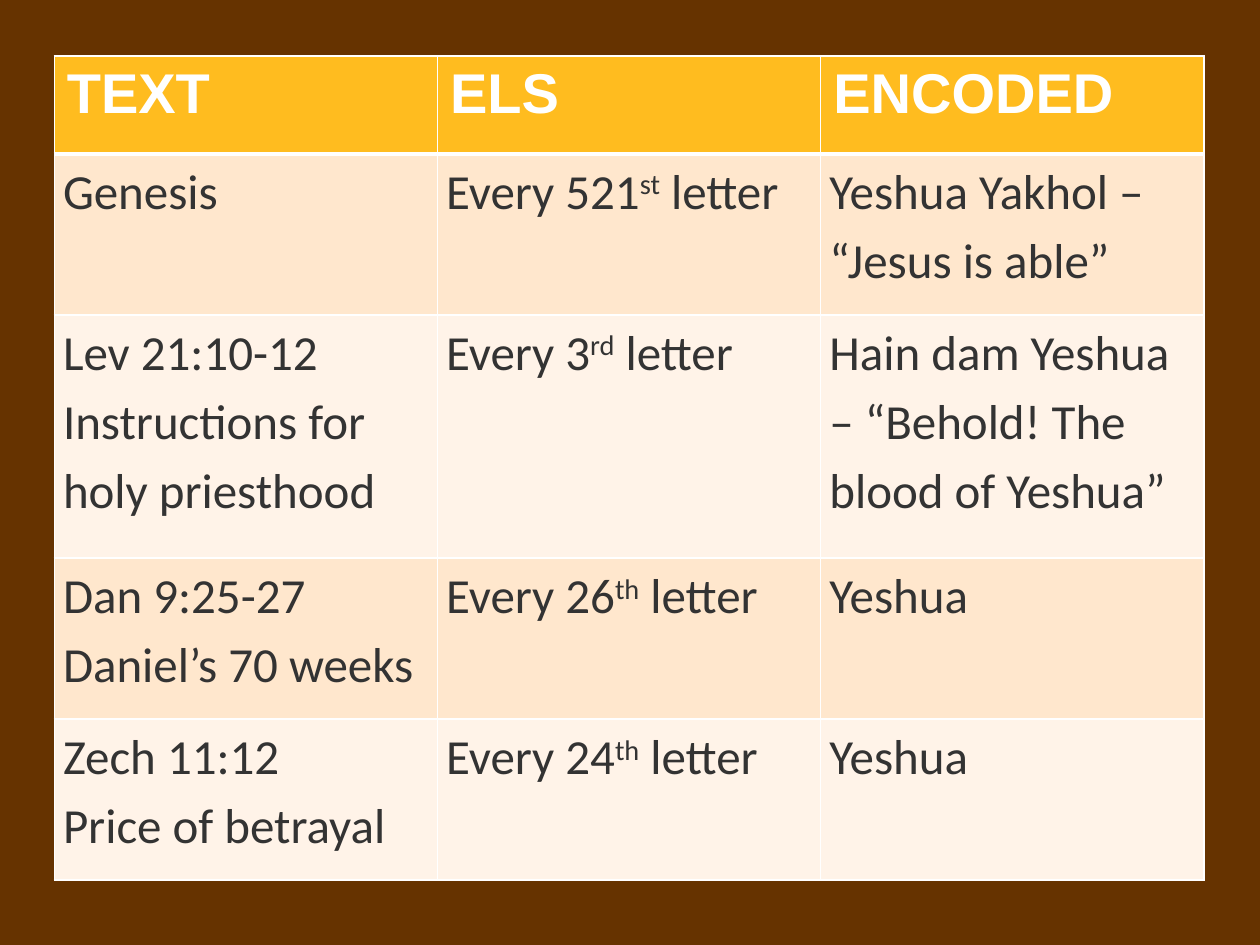
import dataclasses

import pptx
import pptx.dml.color
import pptx.oxml
import pptx.oxml.ns
import pptx.util

Pt = pptx.util.Pt
RGBColor = pptx.dml.color.RGBColor

BROWN = RGBColor(0x66, 0x33, 0x00)
AMBER = RGBColor(0xFF, 0xBC, 0x1F)
PEACH = RGBColor(0xFF, 0xE7, 0xCD)
CREAM = RGBColor(0xFF, 0xF3, 0xE8)
WHITE = RGBColor(0xFF, 0xFF, 0xFF)
CHARCOAL = RGBColor(0x33, 0x33, 0x33)


@dataclasses.dataclass(frozen=True)
class Row:
    height: float
    cells: tuple[str, str, str]


# Text between carets is superscript; a newline starts a paragraph
HEADER = Row(56, ("TEXT", "ELS", "ENCODED"))
BODY = (
    Row(92, ("Genesis", "Every 521^st^ letter", "Yeshua Yakhol – “Jesus is able”")),
    Row(139, ("Lev 21:10-12 Instructions for holy priesthood", "Every 3^rd^ letter",
              "Hain dam Yeshua – “Behold! The blood of Yeshua”")),
    Row(92, ("Dan 9:25-27 Daniel’s 70 weeks", "Every 26^th^ letter", "Yeshua")),
    Row(92, ("Zech 11:12\nPrice of betrayal", "Every 24^th^ letter", "Yeshua")),
)
LEFT, TOP, COL_WIDTH = 31, 32, 219


def write_text(tf, text: str, *, font: str, size: float, color: RGBColor,
               bold: bool = False, line_spacing: float = 1.0) -> None:
    for i, line in enumerate(text.split("\n")):
        p = tf.add_paragraph() if i else tf.paragraphs[0]
        p.line_spacing = line_spacing
        for j, part in enumerate(line.split("^")):
            r = p.add_run()
            r.text = part
            r.font.name, r.font.size, r.font.bold = font, Pt(size), bold
            r.font.color.rgb = color
            if j % 2:
                r.font._element.set("baseline", "30000")


def set_borders(cell, **widths: float) -> None:
    tc_pr = cell._tc.get_or_add_tcPr()
    for side in ("L", "R", "T", "B"):
        width = Pt(widths.get(side, 1))
        tc_pr.append(pptx.oxml.parse_xml(
            f'<a:ln{side} {pptx.oxml.ns.nsdecls("a")} w="{width}"><a:solidFill>'
            f'<a:srgbClr val="{WHITE}"/></a:solidFill></a:ln{side}>'))


def fill_cell(cell, color: RGBColor) -> None:
    cell.fill.solid()
    cell.fill.fore_color.rgb = color


def draw_table(slide, header: Row, body: tuple[Row, ...]) -> None:
    rows = (header, *body)
    n_cols = len(header.cells)
    table = slide.shapes.add_table(
        len(rows), n_cols, Pt(LEFT), Pt(TOP), Pt(COL_WIDTH * n_cols),
        Pt(sum(row.height for row in rows))).table
    table.horz_banding = False
    for column in table.columns:
        column.width = Pt(COL_WIDTH)

    for i, row in enumerate(rows):
        table.rows[i].height = Pt(row.height)
        for j, text in enumerate(row.cells):
            cell = table.cell(i, j)
            if i == 0:
                set_borders(cell, B=3)
                fill_cell(cell, AMBER)
                write_text(cell.text_frame, text, font="Arial", size=32,
                           color=WHITE, bold=True)
            else:
                set_borders(cell, T=3 if i == 1 else 1)
                fill_cell(cell, PEACH if i % 2 else CREAM)
                cell.margin_left = cell.margin_right = Pt(5)
                cell.margin_top = cell.margin_bottom = Pt(0)
                write_text(cell.text_frame, text, font="Calibri", size=28,
                           color=CHARCOAL, line_spacing=1.15)


def main() -> None:
    prs = pptx.Presentation()
    prs.slide_width, prs.slide_height = Pt(720), Pt(540)
    slide = prs.slides.add_slide(prs.slide_layouts[6])

    # Background
    slide.background.fill.solid()
    slide.background.fill.fore_color.rgb = BROWN

    # Table of letter-skip codes
    draw_table(slide, HEADER, BODY)
    prs.save("out.pptx")


if __name__ == "__main__":
    main()
